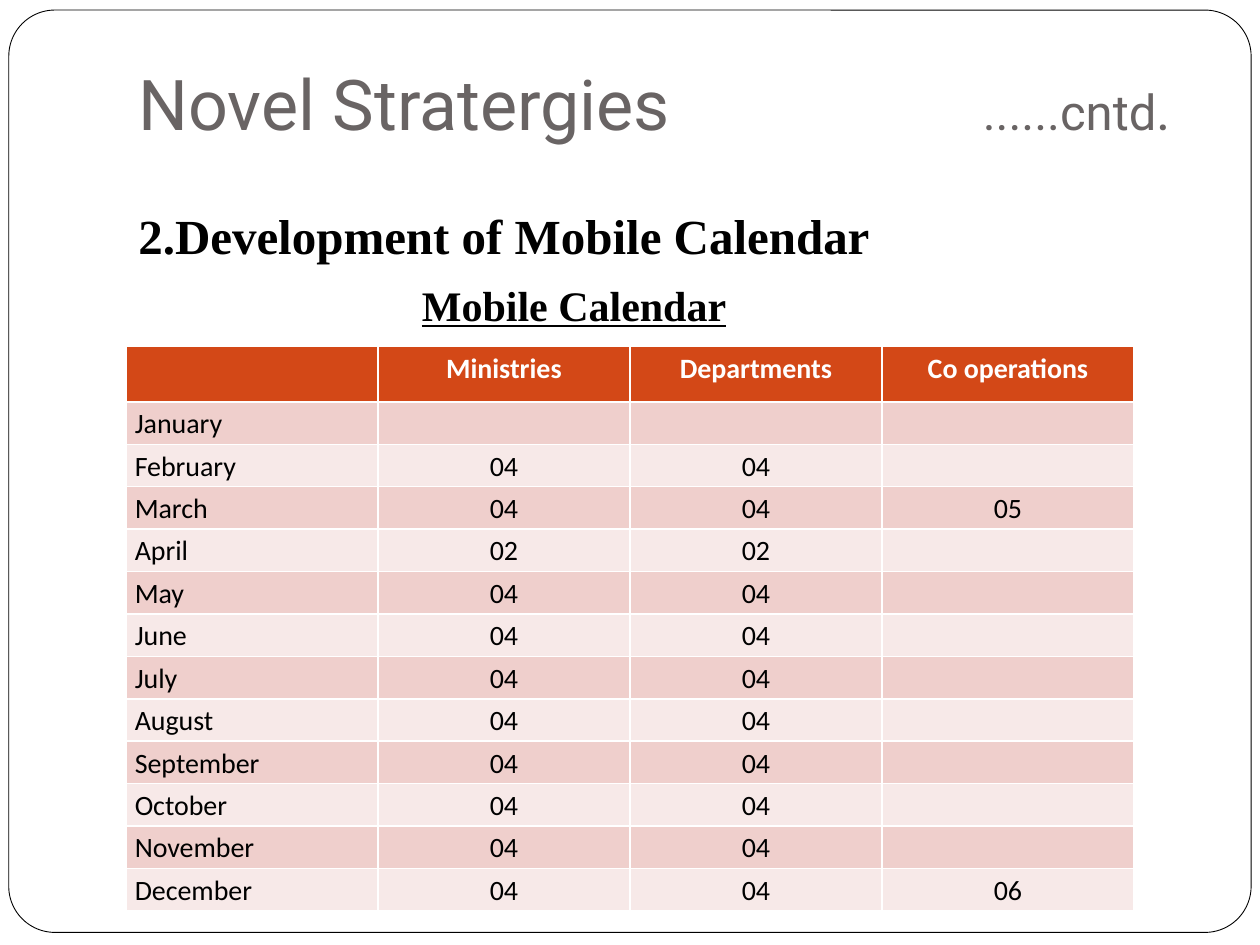
"""Build the mobile calendar slide with its monthly table."""
from dataclasses import dataclass

from lxml.etree import SubElement
from pptx import Presentation
from pptx.dml.color import RGBColor
from pptx.enum.shapes import MSO_SHAPE
from pptx.enum.text import MSO_ANCHOR, MSO_AUTO_SIZE, PP_ALIGN
from pptx.oxml.ns import qn
from pptx.util import Inches, Pt


@dataclass(frozen=True)
class Theme:
    white: str = "FFFFFF"
    black: str = "000000"
    grey: str = "696464"
    header: str = "D34817"
    bands: tuple = ("EFCFCC", "F7E9E8")
    title_font: str = "Roboto"
    heading_font: str = "Times New Roman"
    table_font: str = "Calibri"
    title_size: int = 40
    heading_size: int = 28
    stop_size: int = 31
    caption_size: int = 24
    table_size: int = 16


THEME = Theme()
TITLE = [
    ("Novel Stratergies\t", THEME.title_size),
    ("......cntd", THEME.heading_size),
    (".", THEME.stop_size),
]
HEADING = "2.Development of Mobile Calendar"
CAPTION = "Mobile Calendar"
CALENDAR = [
    ("", "Ministries", "Departments", "Co operations"),
    ("January", "", "", ""),
    ("February", "04", "04", ""),
    ("March", "04", "04", "05"),
    ("April", "02", "02", ""),
    ("May", "04", "04", ""),
    ("June", "04", "04", ""),
    ("July", "04", "04", ""),
    ("August", "04", "04", ""),
    ("September", "04", "04", ""),
    ("October", "04", "04", ""),
    ("November", "04", "04", ""),
    ("December", "04", "04", "06"),
]
LEFT, TEXT_WIDTH = Inches(1), Inches(8.5)
TABLE_WIDTH, TABLE_HEIGHT, HEADER_HEIGHT = Inches(8), Inches(4.48), Inches(0.44)


def style(run, font, size, color, bold=False, underline=False):
    run.font.name = font
    run.font.size = Pt(size)
    run.font.color.rgb = RGBColor.from_string(color)
    run.font.bold = bold
    run.font.underline = underline


def add_frame(slide):
    frame = slide.shapes.add_shape(
        MSO_SHAPE.ROUNDED_RECTANGLE, Inches(0.07), Inches(0.08), Inches(9.86), Inches(7.32)
    )
    frame.adjustments[0] = 0.05
    frame.shadow.inherit = False
    frame.fill.solid()
    frame.fill.fore_color.rgb = RGBColor.from_string(THEME.white)
    frame.line.color.rgb = RGBColor.from_string(THEME.black)
    frame.line.width = Pt(0.5)
    slide.shapes._spTree.insert(2, frame._element)


def fill_title(title):
    title.left, title.top, title.width, title.height = LEFT, Inches(0.3), TEXT_WIDTH, Inches(0.95)
    body = title.text_frame
    body.auto_size = MSO_AUTO_SIZE.NONE
    body.vertical_anchor = MSO_ANCHOR.BOTTOM
    body.margin_bottom = Inches(0.1)
    line = body.paragraphs[0]
    line.alignment = PP_ALIGN.LEFT
    stops = SubElement(line._p.get_or_add_pPr(), qn("a:tabLst"))
    SubElement(stops, qn("a:tab"), pos=str(Inches(6.7)), algn="l")
    for text, size in TITLE:
        run = line.add_run()
        run.text = text
        style(run, THEME.title_font, size, THEME.grey)


def add_heading(slide, text, left, top, width, height, size, underline=False):
    box = slide.shapes.add_textbox(left, top, width, height)
    box.text_frame.word_wrap = True
    line = box.text_frame.paragraphs[0]
    line.text = text
    style(line.runs[0], THEME.heading_font, size, THEME.black, True, underline)
    return line


def add_calendar(slide):
    rows, columns = len(CALENDAR), len(CALENDAR[0])
    calendar = slide.shapes.add_table(
        rows, columns, LEFT, Inches(2.75), TABLE_WIDTH, TABLE_HEIGHT
    ).table
    for row, values in enumerate(CALENDAR):
        is_header = row == 0
        month_height = (TABLE_HEIGHT - HEADER_HEIGHT) // (rows - 1)
        calendar.rows[row].height = HEADER_HEIGHT if is_header else month_height
        fill = THEME.header if is_header else THEME.bands[(row - 1) % 2]
        color = THEME.white if is_header else THEME.black
        for column, value in enumerate(values):
            cell = calendar.cell(row, column)
            cell.fill.solid()
            cell.fill.fore_color.rgb = RGBColor.from_string(fill)
            cell.margin_left = cell.margin_right = Inches(0.07)
            cell.margin_top = cell.margin_bottom = 0
            if value:
                line = cell.text_frame.paragraphs[0]
                line.text = value
                line.line_spacing = 1.15
                line.alignment = PP_ALIGN.CENTER if column else PP_ALIGN.LEFT
                style(line.runs[0], THEME.table_font, THEME.table_size, color, is_header)


def main():
    deck = Presentation()
    deck.slide_width, deck.slide_height = Inches(10), Inches(7.5)
    slide = deck.slides.add_slide(deck.slide_layouts[5])
    add_frame(slide)
    fill_title(slide.shapes.title)
    heading = add_heading(
        slide, HEADING, LEFT, Inches(1.58), TEXT_WIDTH, Inches(0.6), THEME.heading_size
    )
    heading.space_before = Pt(5.8)
    add_calendar(slide)
    add_heading(
        slide, CAPTION, Inches(3.25), Inches(2.17), Inches(4.42), Inches(0.5),
        THEME.caption_size, underline=True,
    )
    deck.save("out.pptx")


if __name__ == "__main__":
    main()
